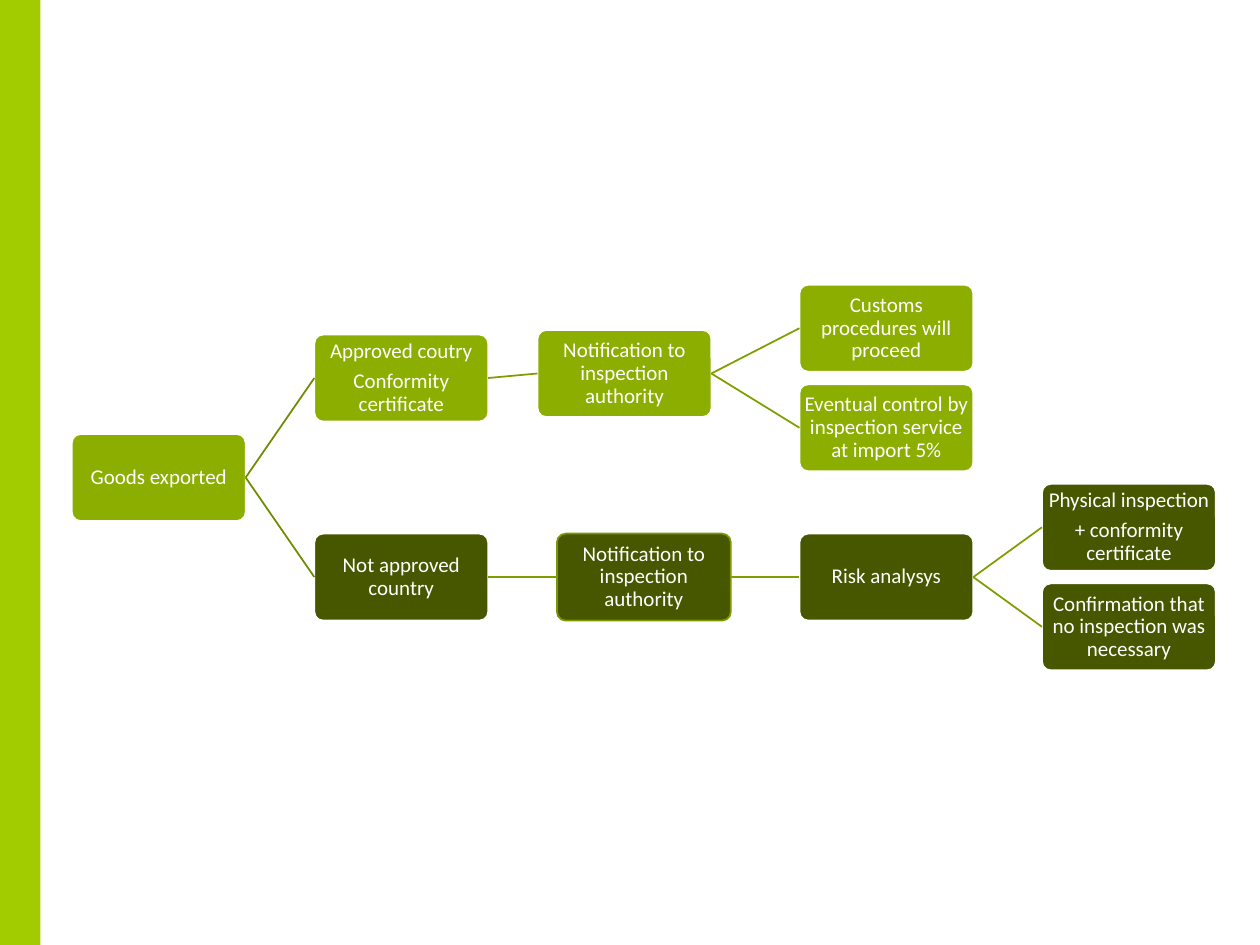
"""Build a slide with a tree of the inspection steps for exported goods."""
from lxml import etree
from pptx import Presentation
from pptx import util as u
from pptx.dml.color import RGBColor
from pptx.enum import shapes, text
from pptx.oxml.ns import qn


def paint(color_format, color):
    color_format.rgb = RGBColor.from_string(color)


LIME, GREEN, OLIVE, WHITE = "A3CC00", "8BAE00", "465700", "FFFFFF"
ROOT_LINK, LINK, OUTLINE = "6F8B00", "7E9E00", "7A9900"
LEFT, TOP = 0.57, 2.26
COLUMN, ROW = 1.925, 0.395
BOX_WIDTH, BOX_HEIGHT = 1.38, 0.69
LEFT_SIDE, RIGHT_SIDE = 1, 3

STEPS = [
    ("goods", None, 0, 3, GREEN, WHITE, ["Goods exported"]),
    ("approved", "goods", 1, 1, GREEN, WHITE, ["Approved coutry", "Conformity certificate"]),
    ("notice", "approved", 1.92, 0.91, GREEN, WHITE, ["Notification to inspection authority"]),
    ("customs", "notice", 3, 0, GREEN, WHITE, ["Customs procedures will proceed"]),
    ("control", "notice", 3, 2, GREEN, WHITE, ["Eventual control by inspection service at import 5%"]),
    ("unapproved", "goods", 1, 5, OLIVE, WHITE, ["Not approved country"]),
    ("second notice", "unapproved", 2, 5, OLIVE, OUTLINE, ["Notification to inspection authority"]),
    ("risk", "second notice", 3, 5, OLIVE, WHITE, ["Risk analysys"]),
    ("inspection", "risk", 4, 4, OLIVE, WHITE, ["Physical inspection", "+ conformity certificate"]),
    ("confirmation", "risk", 4, 6, OLIVE, WHITE, ["Confirmation that no inspection was necessary"]),
]

deck = Presentation()
deck.slide_width, deck.slide_height = u.Inches(10), u.Inches(7.5)
page = deck.slides.add_slide(deck.slide_layouts[6])

band = page.shapes.add_shape(shapes.MSO_SHAPE.RECTANGLE, 0, 0, u.Inches(0.32), deck.slide_height)
band.shadow.inherit = False
band.fill.solid()
paint(band.fill.fore_color, LIME)
band.line.fill.background()

boxes = {}
for step, parent, column, row, fill, outline, lines in STEPS:
    box = page.shapes.add_shape(
        shapes.MSO_SHAPE.ROUNDED_RECTANGLE,
        u.Inches(LEFT + column * COLUMN), u.Inches(TOP + row * ROW),
        u.Inches(BOX_WIDTH), u.Inches(BOX_HEIGHT))
    boxes[step] = box
    box.adjustments[0] = 0.1
    box.shadow.inherit = False
    box.fill.solid()
    paint(box.fill.fore_color, fill)
    box.line.width = u.Pt(1)
    paint(box.line.color, outline)

    frame = box.text_frame
    frame.word_wrap = True
    frame.vertical_anchor = text.MSO_ANCHOR.MIDDLE
    frame.margin_left = frame.margin_right = u.Inches(0.01)
    frame.margin_top = frame.margin_bottom = u.Inches(0.01)
    for index, line in enumerate(lines):
        para = frame.add_paragraph() if index else frame.paragraphs[0]
        para.alignment = text.PP_ALIGN.CENTER
        para.line_spacing = 0.9
        para.space_after = u.Pt(4.2)
        span = para.add_run()
        span.text = line
        span.font.name = "Calibri"
        span.font.size = u.Pt(12)
        paint(span.font.color, WHITE)

    if parent:
        link = page.shapes.add_connector(shapes.MSO_CONNECTOR.STRAIGHT, 0, 0, 0, 0)
        link.begin_connect(boxes[parent], RIGHT_SIDE)
        link.end_connect(box, LEFT_SIDE)
        link.line.width = u.Pt(1)
        paint(link.line.color, ROOT_LINK if parent == "goods" else LINK)
        etree.SubElement(link._element.spPr, qn("a:effectLst"))

deck.save("out.pptx")
